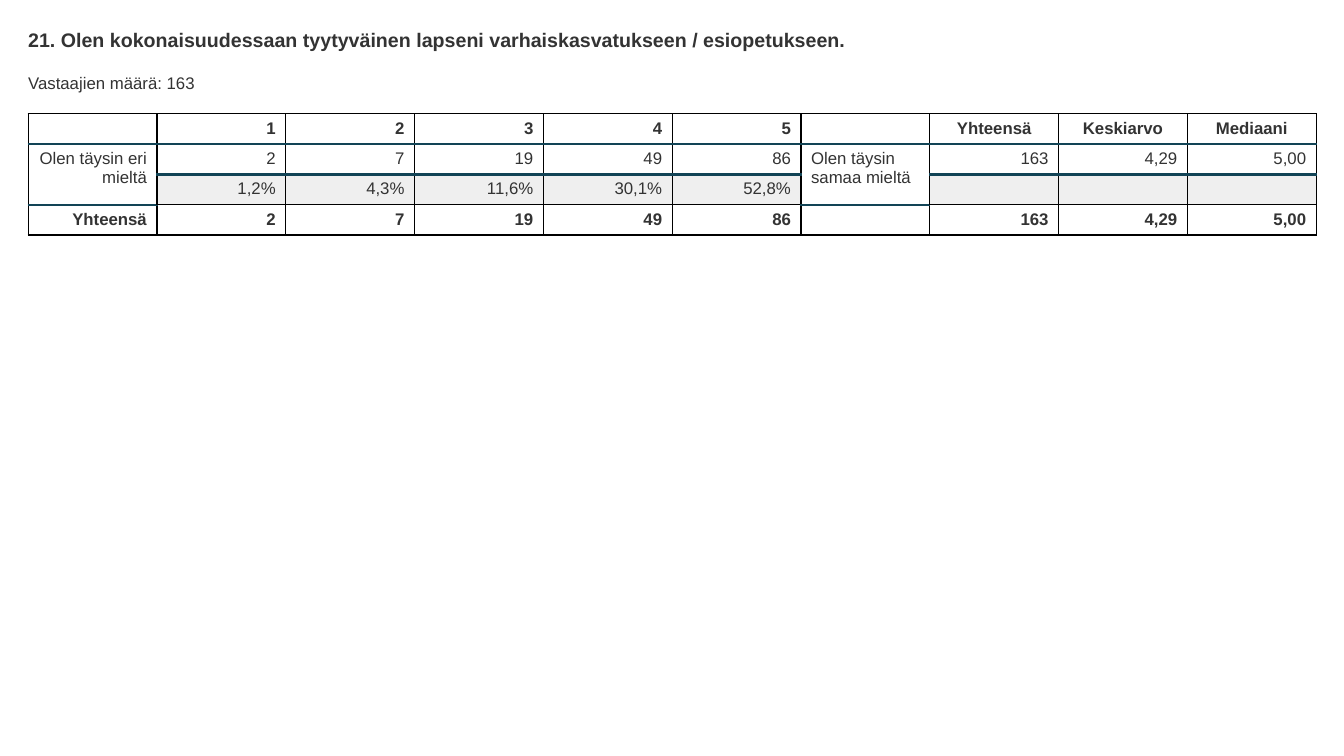
"""Build the survey question slide with its table of answers."""
from dataclasses import dataclass

from lxml import etree
from pptx import Presentation
from pptx.dml.color import RGBColor
from pptx.enum.text import MSO_ANCHOR, MSO_AUTO_SIZE, PP_ALIGN
from pptx.oxml.ns import qn
from pptx.util import Cm, Pt

LEFT, CENTER, RIGHT = PP_ALIGN.LEFT, PP_ALIGN.CENTER, PP_ALIGN.RIGHT
TOP = MSO_ANCHOR.TOP
GROW = MSO_AUTO_SIZE.SHAPE_TO_FIT_TEXT

COLORS = {
    "text": "333333",
    "accent": "124456",
    "grid": "000000",
    "white": "FFFFFF",
    "shade": "EFEFEF",
}
FONT_NAME = "Arial"
MARGIN = Cm(0.71)
CONTENT_WIDTH = Cm(32.46)
ROW_HEIGHT = Cm(0.76)
SCALE_END_COLUMN = 6
MERGED_COLUMNS = (0, SCALE_END_COLUMN)


@dataclass(frozen=True)
class AnswerRow:
    texts: tuple[str, ...]
    bold: bool = False
    fill: str = "white"
    top: str = "grid"
    bottom: str = "grid"
    summary_align: PP_ALIGN = RIGHT


ROWS = (
    AnswerRow(("", "1", "2", "3", "4", "5", "", "Yhteensä", "Keskiarvo", "Mediaani"),
              bold=True, bottom="accent", summary_align=CENTER),
    AnswerRow(("Olen täysin eri mieltä", "2", "7", "19", "49", "86",
               "Olen täysin samaa mieltä", "163", "4,29", "5,00"),
              top="accent", bottom="accent"),
    AnswerRow(("", "1,2%", "4,3%", "11,6%", "30,1%", "52,8%", "", "", "", ""),
              fill="shade", top="accent"),
    AnswerRow(("Yhteensä", "2", "7", "19", "49", "86", "", "163", "4,29", "5,00"),
              bold=True),
)


def format_paragraph(paragraph, size: int, bold: bool, align: PP_ALIGN) -> None:
    """Apply the slide's font and an alignment to a paragraph."""
    paragraph.alignment = align
    paragraph.font.name = FONT_NAME
    paragraph.font.size = Pt(size)
    paragraph.font.bold = bold
    paragraph.font.color.rgb = RGBColor.from_string(COLORS["text"])


def fill_text_box(shape, text: str, top: float, height: float, size: int, bold: bool) -> None:
    """Place a full-width text shape and write one line in it."""
    shape.left, shape.top = MARGIN, Cm(top)
    shape.width, shape.height = CONTENT_WIDTH, Cm(height)
    frame = shape.text_frame
    frame.margin_left = frame.margin_top = frame.margin_right = frame.margin_bottom = 0
    frame.word_wrap = True
    frame.auto_size = GROW
    frame.vertical_anchor = TOP
    frame.text = text
    format_paragraph(frame.paragraphs[0], size, bold, LEFT)


def add_border(cell, side: str, color: str) -> None:
    """Draw one side of a cell, with accent lines thicker than the grid."""
    width = Pt(2 if color == "accent" else 1)
    line = etree.SubElement(cell._tc.get_or_add_tcPr(), qn(f"a:ln{side}"), w=str(width))
    fill = etree.SubElement(line, qn("a:solidFill"))
    etree.SubElement(fill, qn("a:srgbClr"), val=COLORS[color])


def fill_cell(cell, row: AnswerRow, column: int) -> None:
    """Write and format one table cell."""
    for side, color in (("L", "grid"), ("R", "grid"), ("T", row.top), ("B", row.bottom)):
        add_border(cell, side, color)
    cell.fill.solid()
    cell.fill.fore_color.rgb = RGBColor.from_string(COLORS[row.fill])
    align = RIGHT
    if column == SCALE_END_COLUMN:
        align = LEFT
    elif column > SCALE_END_COLUMN:
        align = row.summary_align
    paragraph = cell.text_frame.paragraphs[0]
    if row.texts[column]:
        paragraph.text = row.texts[column]
    format_paragraph(paragraph, 12, row.bold, align)
    if not row.texts[column]:
        etree.SubElement(paragraph._p, qn("a:endParaRPr"), sz="1200")


def add_answer_table(slide) -> None:
    """Add the table of answers with its two merged scale labels."""
    column_count = len(ROWS[0].texts)
    table = slide.shapes.add_table(
        len(ROWS), column_count, MARGIN, Cm(2.87), CONTENT_WIDTH, ROW_HEIGHT * len(ROWS)
    ).table
    table.first_row = False
    table.horz_banding = False
    for column in MERGED_COLUMNS:
        table.cell(1, column).merge(table.cell(2, column))
    for row_index, row in enumerate(ROWS):
        for column in range(column_count):
            cell = table.cell(row_index, column)
            if not cell.is_spanned:
                fill_cell(cell, row, column)


def main() -> None:
    """Create and save the presentation."""
    presentation = Presentation()
    presentation.slide_width, presentation.slide_height = Cm(33.87), Cm(19.05)
    slide = presentation.slides.add_slide(presentation.slide_layouts[5])
    fill_text_box(
        slide.shapes.title,
        "21. Olen kokonaisuudessaan tyytyväinen lapseni varhaiskasvatukseen / esiopetukseen.",
        0.71, 0.58, 14, True,
    )
    respondents = slide.shapes.add_textbox(0, 0, 0, 0)
    fill_text_box(respondents, "Vastaajien määrä: 163", 1.83, 0.51, 12, False)
    add_answer_table(slide)
    presentation.save("out.pptx")


if __name__ == "__main__":
    main()
